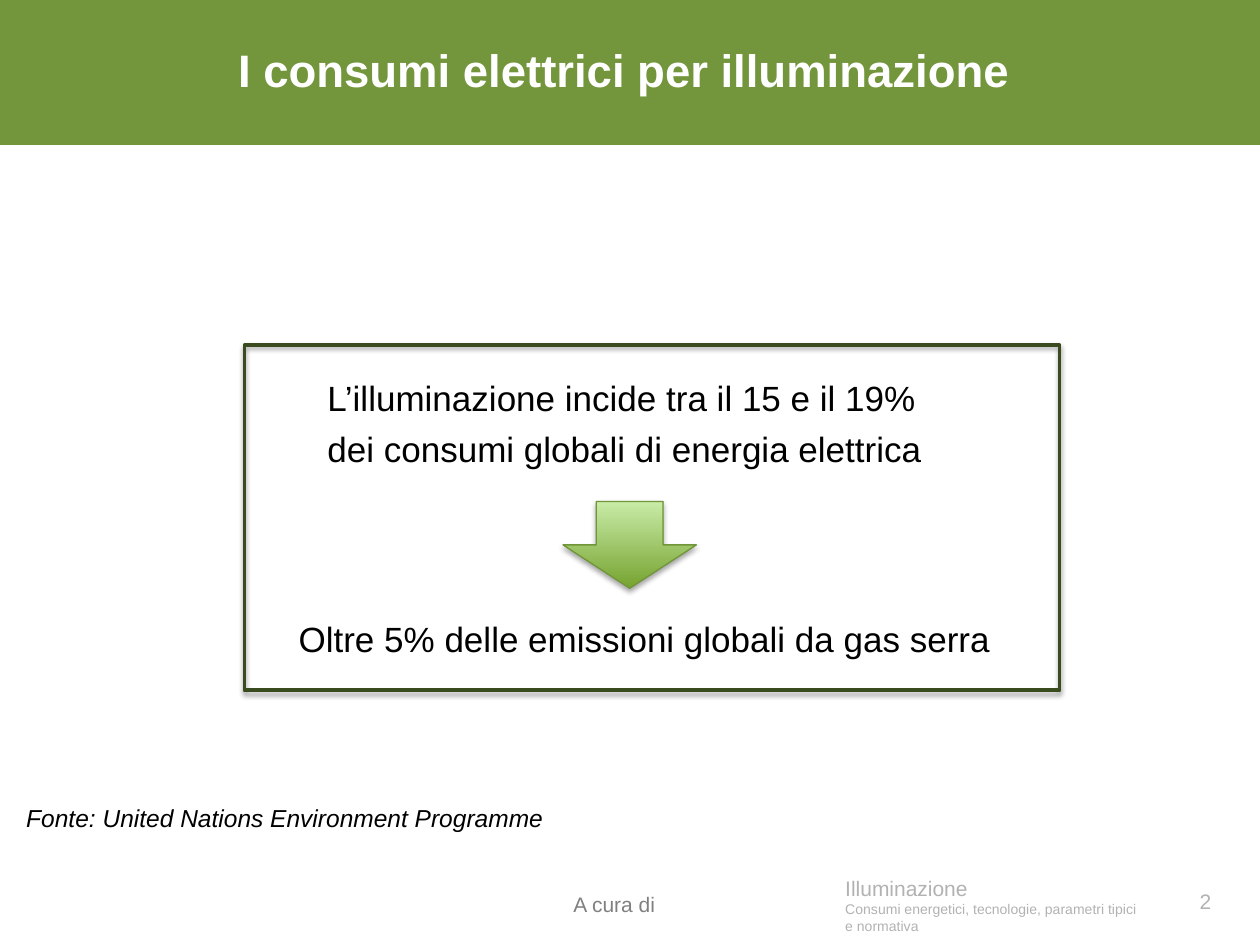
from lxml.etree import SubElement as Sub
from pptx import Presentation
from pptx.dml.color import RGBColor
from pptx.enum.shapes import MSO_SHAPE as Shape
from pptx.enum.text import MSO_ANCHOR as Anchor, PP_ALIGN as Align
from pptx.oxml.ns import qn
from pptx.util import Cm, Pt

GREEN = RGBColor(0x73, 0x96, 0x3D)
DARK = RGBColor(0x3A, 0x4B, 0x1F)
EDGE = RGBColor(0x71, 0x95, 0x39)
LEAF = RGBColor(0x76, 0xA3, 0x30)
PALE = RGBColor(0xC9, 0xEB, 0xA7)
WHITE = RGBColor(0xFF, 0xFF, 0xFF)
BLACK = RGBColor(0, 0, 0)
GREY = RGBColor(0x80, 0x80, 0x80)
SILVER = RGBColor(0xB2, 0xB2, 0xB2)


def add_text(slide, text, box, size=20, color=BLACK, bold=False, italic=False,
             align=Align.LEFT, anchor=Anchor.TOP, pad=(0.25, 0, 0.25, 0),
             gap=0, wrap=True):
    """Add a text box: one paragraph per line, size may be a list per line."""
    frame = slide.shapes.add_textbox(*map(Cm, box)).text_frame
    frame.word_wrap = wrap
    frame.vertical_anchor = anchor
    (frame.margin_left, frame.margin_top,
     frame.margin_right, frame.margin_bottom) = map(Cm, pad)
    lines = text.split("\n")
    sizes = size if isinstance(size, list) else [size] * len(lines)
    for i, (line, pts) in enumerate(zip(lines, sizes)):
        para = frame.add_paragraph() if i else frame.paragraphs[0]
        para.alignment = align
        para.space_before = Pt(gap if i else 0)
        run = para.add_run()
        run.text = line
        font = run.font
        font.name, font.size = "Arial", Pt(pts)
        font.bold, font.italic = bold, italic
        font.color.rgb = color


def add_shape(slide, kind, box, fill=None, line=None, width=0):
    shape = slide.shapes.add_shape(kind, *map(Cm, box))
    shape.shadow.inherit = False
    if fill is None:
        shape.fill.background()
    else:
        shape.fill.solid()
        shape.fill.fore_color.rgb = fill
    if line is None:
        shape.line.fill.background()
    else:
        shape.line.color.rgb = line
        shape.line.width = Pt(width)
    return shape


def add_shadow(shape):
    """Cast a soft black shadow straight down."""
    effects = shape.element.spPr.find(qn("a:effectLst"))
    outer = Sub(effects, qn("a:outerShdw"), blurRad=str(Pt(3.1)),
                dist=str(Pt(1.8)), dir="5400000", rotWithShape="0")
    color = Sub(outer, qn("a:srgbClr"), val="000000")
    Sub(color, qn("a:alpha"), val="35000")


def add_arrow(slide, box):
    arrow = add_shape(slide, Shape.DOWN_ARROW, box, line=EDGE, width=0.75)
    arrow.fill.gradient()
    arrow.fill.gradient_angle = 90
    for stop, color, place in zip(arrow.fill.gradient_stops, (LEAF, PALE), (0, 1)):
        stop.color.rgb = color
        stop.position = place
    add_shadow(arrow)


def add_footer(slide):
    add_text(slide, "A cura di", (11.56, 17.65, 5.59, 1.02), size=12,
             color=GREY, anchor=Anchor.MIDDLE, pad=(0, 0.13, 0.25, 0))
    add_text(slide, "Illuminazione\nConsumi energetici, tecnologie, "
             "parametri tipici e normativa", (17.04, 17.63, 6.17, 1.22),
             size=[12, 8], color=SILVER, anchor=Anchor.MIDDLE,
             pad=(0, 0, 0.25, 0))
    add_text(slide, "2", (23.22, 17.65, 1.45, 1.02), size=12, color=SILVER,
             align=Align.RIGHT, anchor=Anchor.MIDDLE,
             pad=(0.25, 0.13, 0.25, 0.13))


def main():
    deck = Presentation()
    deck.slide_width, deck.slide_height = Cm(25.4), Cm(19.05)
    slide = deck.slides.add_slide(deck.slide_layouts[6])

    add_shape(slide, Shape.RECTANGLE, (0, 0, 25.4, 2.92), fill=GREEN)
    add_text(slide, "I consumi elettrici per illuminazione",
             (4.55, 0.84, 16.31, 1.12), size=26, color=WHITE, bold=True,
             anchor=Anchor.MIDDLE)
    add_text(slide, "L’illuminazione incide tra il 15 e il 19%\n"
             "dei consumi globali di energia elettrica",
             (6.35, 7.47, 13.23, 2.13), gap=4.6, pad=(0.25, 0.13, 0.25, 0.13))
    add_arrow(slide, (11.35, 10.11, 2.69, 1.75))
    add_text(slide, "Oltre 5% delle emissioni globali da gas serra",
             (5.77, 12.45, 14.76, 0.86), wrap=False)
    frame = add_shape(slide, Shape.RECTANGLE, (4.93, 6.96, 16.43, 6.96),
                      line=DARK, width=2.25)
    add_shadow(frame)
    add_text(slide, "Fonte: United Nations Environment Programme",
             (0.28, 16.18, 11, 0.61), size=14, italic=True, wrap=False)
    add_footer(slide)
    deck.save("out.pptx")


if __name__ == "__main__":
    main()
